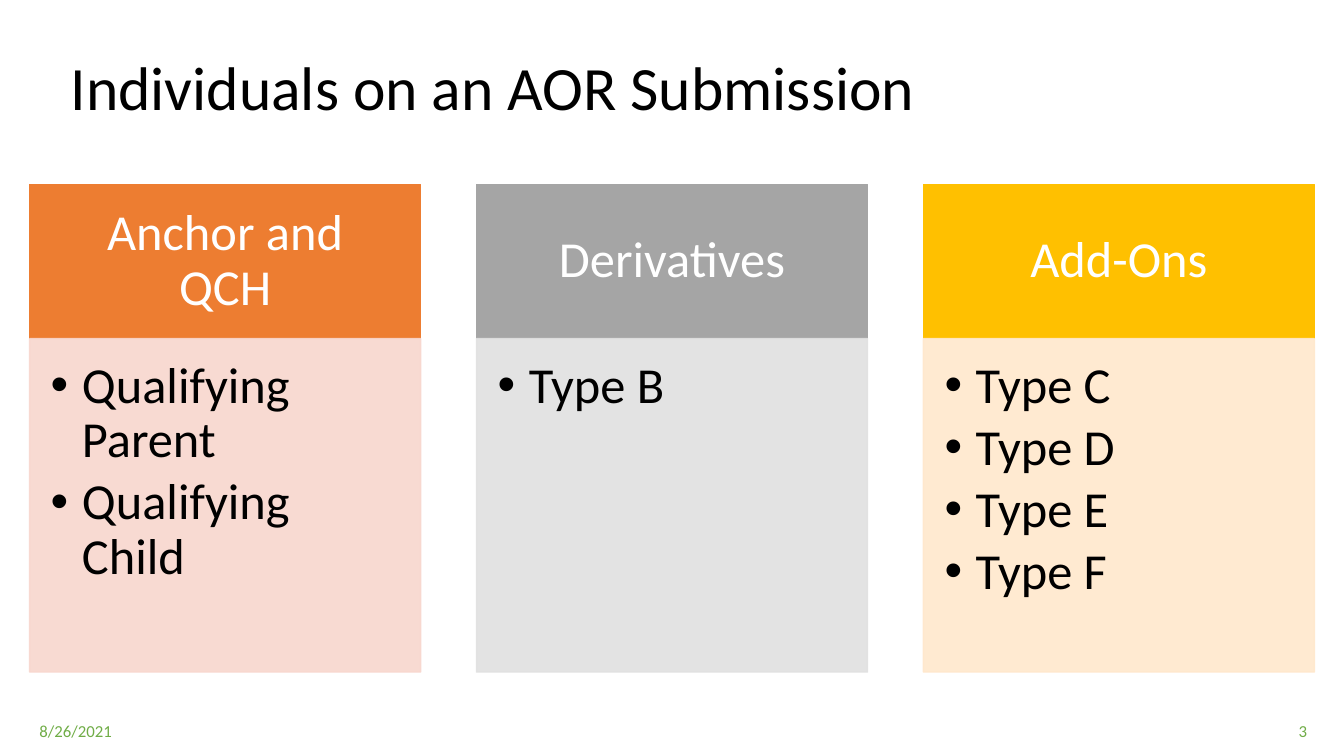
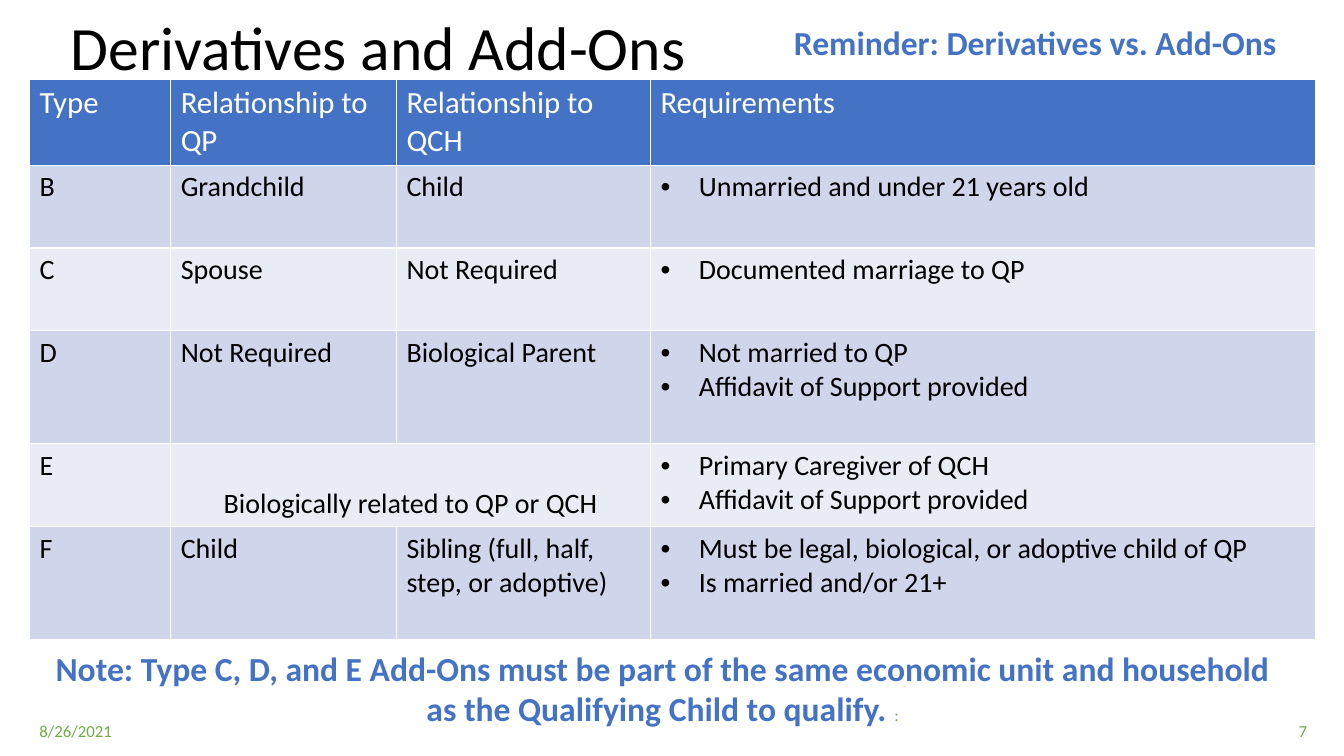
from dataclasses import dataclass

from lxml.etree import SubElement
from pptx import Presentation
from pptx.dml.color import RGBColor
from pptx.enum.shapes import MSO_SHAPE as Shape
from pptx.enum.text import MSO_ANCHOR as Anchor, MSO_AUTO_SIZE as AutoSize, PP_ALIGN as Align
from pptx.oxml.ns import qn
from pptx.util import Inches, Pt


@dataclass(frozen=True)
class Theme:
    """Colours, type sizes and the shared grid (in percent of the slide)."""
    font: str = "Calibri"
    black: str = "000000"
    white: str = "FFFFFF"
    blue: str = "4472C4"
    green: str = "70AD47"
    bands: tuple = ("CFD5EA", "E9EBF5")
    title_size: int = 44
    card_size: int = 36
    callout_size: int = 24
    head_size: int = 22
    cell_size: int = 20
    footer_size: int = 12
    margin: float = 2.2
    content: float = 95.6


class Deck:
    """Holds the theme and the current slide."""

    def __init__(self, theme):
        self.theme = theme
        self.show = Presentation()
        self.show.slide_width = Inches(13.33)
        self.show.slide_height = Inches(7.5)
        self.slide = None

    # Measures
    def across(self, share):
        return round(self.show.slide_width * share / 100)

    def down(self, share):
        return round(self.show.slide_height * share / 100)

    def area(self, left, top, width, height):
        return self.across(left), self.down(top), self.across(width), self.down(height)

    # Text and colour
    def add_text(self, paragraph, text, size, colour, bold=False):
        run = paragraph.add_run()
        run.text = text
        run.font.name = self.theme.font
        run.font.size = Pt(size)
        run.font.bold = bold
        run.font.color.rgb = RGBColor.from_string(colour)

    def add_list(self, frame, items, size, indent, gap=0, spacing=None):
        for index, item in enumerate(items):
            paragraph = frame.add_paragraph() if index else frame.paragraphs[0]
            paragraph.alignment = Align.LEFT
            paragraph.line_spacing = spacing
            paragraph.space_after = Pt(gap)
            props = paragraph._p.get_or_add_pPr()
            props.set("marL", str(Inches(indent)))
            props.set("indent", str(-Inches(indent)))
            SubElement(props, qn("a:buFont")).set("typeface", "Arial")
            SubElement(props, qn("a:buChar")).set("char", "•")
            self.add_text(paragraph, item, size, self.theme.black)

    def paint(self, fill, colour, opacity=100):
        fill.solid()
        fill.fore_color.rgb = RGBColor.from_string(colour)
        if opacity < 100:
            tone = fill._xPr.find(f"{qn('a:solidFill')}/{qn('a:srgbClr')}")
            SubElement(tone, qn("a:alpha")).set("val", str(opacity * 1000))

    # Slide with title and footer
    def new_slide(self, title, top, date, number):
        theme = self.theme
        self.slide = self.show.slides.add_slide(self.show.slide_layouts[5])
        heading = self.slide.shapes.title
        heading.left, heading.top, heading.width, heading.height = self.area(4.5, top, 93.4, 13.33)
        frame = heading.text_frame
        frame.auto_size = AutoSize.NONE
        frame.vertical_anchor = Anchor.MIDDLE
        paragraph = frame.paragraphs[0]
        paragraph.alignment = Align.LEFT
        paragraph.line_spacing = 0.9
        self.add_text(paragraph, title, theme.title_size, theme.black)
        self.label((theme.margin, 94.67, 24.7, 4), [(date, theme.footer_size, theme.green)], Align.LEFT)
        self.label((72.6, 94.67, 25.4, 4), [(number, theme.footer_size, theme.green)], Align.RIGHT)

    def label(self, place, runs, align=Align.CENTER):
        frame = self.slide.shapes.add_textbox(*self.area(*place)).text_frame
        frame.word_wrap = True
        frame.vertical_anchor = Anchor.MIDDLE
        frame.paragraphs[0].alignment = align
        for run in runs:
            self.add_text(frame.paragraphs[0], *run)

    # Cards: a coloured head above a tinted list
    def panel(self, place, colour, opacity, anchor, insets):
        box = self.slide.shapes.add_shape(Shape.RECTANGLE, *self.area(*place))
        box.shadow.inherit = False
        self.paint(box.fill, colour, opacity)
        self.paint(box.line.fill, colour, opacity)
        box.line.width = Pt(1)
        frame = box.text_frame
        frame.word_wrap = True
        frame.vertical_anchor = anchor
        frame.margin_left, frame.margin_top, frame.margin_right, frame.margin_bottom = map(Inches, insets)
        return frame

    def cards(self, groups, width=29.1, top=24.4, head=20.4, body=44.1):
        theme = self.theme
        step = (theme.content - width) / (len(groups) - 1)
        for index, (name, colour, tint, members) in enumerate(groups):
            left = theme.margin + index * step
            frame = self.panel((left, top, width, head), colour, 100, Anchor.MIDDLE,
                               (0.28, 0.16, 0.28, 0.16))
            paragraph = frame.paragraphs[0]
            paragraph.alignment = Align.CENTER
            paragraph.line_spacing = 0.9
            self.add_text(paragraph, name, theme.card_size, theme.white)
            frame = self.panel((left, top + head, width, body), tint, 90, Anchor.TOP,
                               (0.21, 0.21, 0.28, 0.32))
            self.add_list(frame, members, theme.card_size, 0.31, 5.4, 0.9)

    # Table: a list in a cell becomes bullets, None joins the cell to its left
    def table(self, top, columns, heights, rows):
        theme = self.theme
        place = self.area(theme.margin, top, sum(columns), sum(heights))
        grid = self.slide.shapes.add_table(len(rows), len(columns), *place).table
        for column, share in zip(grid.columns, columns):
            column.width = self.across(share)
        for row, share in zip(grid.rows, heights):
            row.height = self.down(share)
        for r, row in enumerate(rows):
            for c, content in enumerate(row):
                cell = grid.cell(r, c)
                self.paint(cell.fill, theme.bands[(r - 1) % 2] if r else theme.blue)
                if content is None:
                    joined = grid.cell(r, c - 1)
                    joined.merge(cell)
                    joined.vertical_anchor = Anchor.BOTTOM
                    joined.text_frame.paragraphs[0].alignment = Align.CENTER
                elif isinstance(content, list):
                    self.add_list(cell.text_frame, content, theme.cell_size, 0.38)
                else:
                    size, colour = ((theme.cell_size, theme.black) if r
                                    else (theme.head_size, theme.white))
                    self.add_text(cell.text_frame.paragraphs[0], content, size, colour)


def main():
    theme = Theme()
    deck = Deck(theme)
    date = "8/26/2021"

    # Groups of individuals
    deck.new_slide("Individuals on an AOR Submission", 5.33, date, "3")
    deck.cards([
        ("Anchor and QCH", "ED7D31", "F8D7CE", ["Qualifying Parent", "Qualifying Child"]),
        ("Derivatives", "A5A5A5", "E1E1E1", ["Type B"]),
        ("Add-Ons", "FFC000", "FFE8CC", ["Type C", "Type D", "Type E", "Type F"]),
    ])

    # Requirements by type
    deck.new_slide("Derivatives and Add-Ons", 0, date, "7")
    support = "Affidavit of Support provided"
    deck.table(10.5, (10.5, 16.8, 18.9, 49.5), (11.35, 10.95, 10.95, 14.95, 10.95, 14.95), [
        ("Type", "Relationship to QP", "Relationship to QCH", "Requirements"),
        ("B", "Grandchild", "Child", ["Unmarried and under 21 years old"]),
        ("C", "Spouse", "Not Required", ["Documented marriage to QP"]),
        ("D", "Not Required", "Biological Parent", ["Not married to QP", support]),
        ("E", "Biologically related to QP or QCH", None, ["Primary Caregiver of QCH", support]),
        ("F", "Child", "Sibling (full, half, step, or adoptive)",
         ["Must be legal, biological, or adoptive child of QP", "Is married and/or 21+"]),
    ])

    # Callouts around the table
    note = ("Note: Type C, D, and E Add-Ons must be part of the same economic unit "
            "and household as the Qualifying Child to qualify. ")
    deck.label((2.25, 87.33, 94.1, 7.33), [(note, theme.callout_size, theme.blue, True),
                                           (":", theme.footer_size, theme.green)])
    deck.label((56.25, 1.87, 41.55, 7.33),
               [("Reminder: Derivatives vs. Add-Ons", theme.callout_size, theme.blue, True)])

    deck.show.save("out.pptx")


if __name__ == "__main__":
    main()
